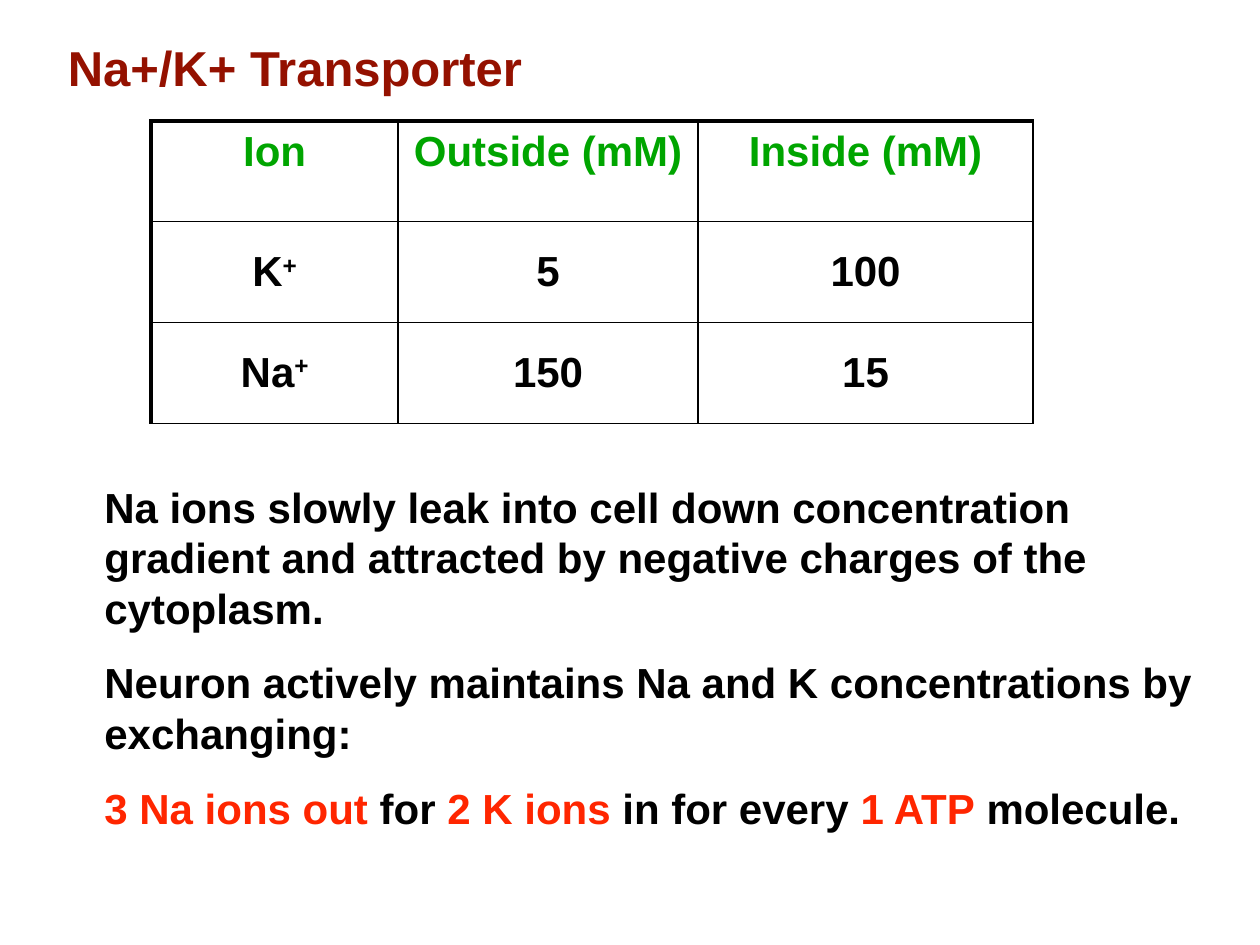
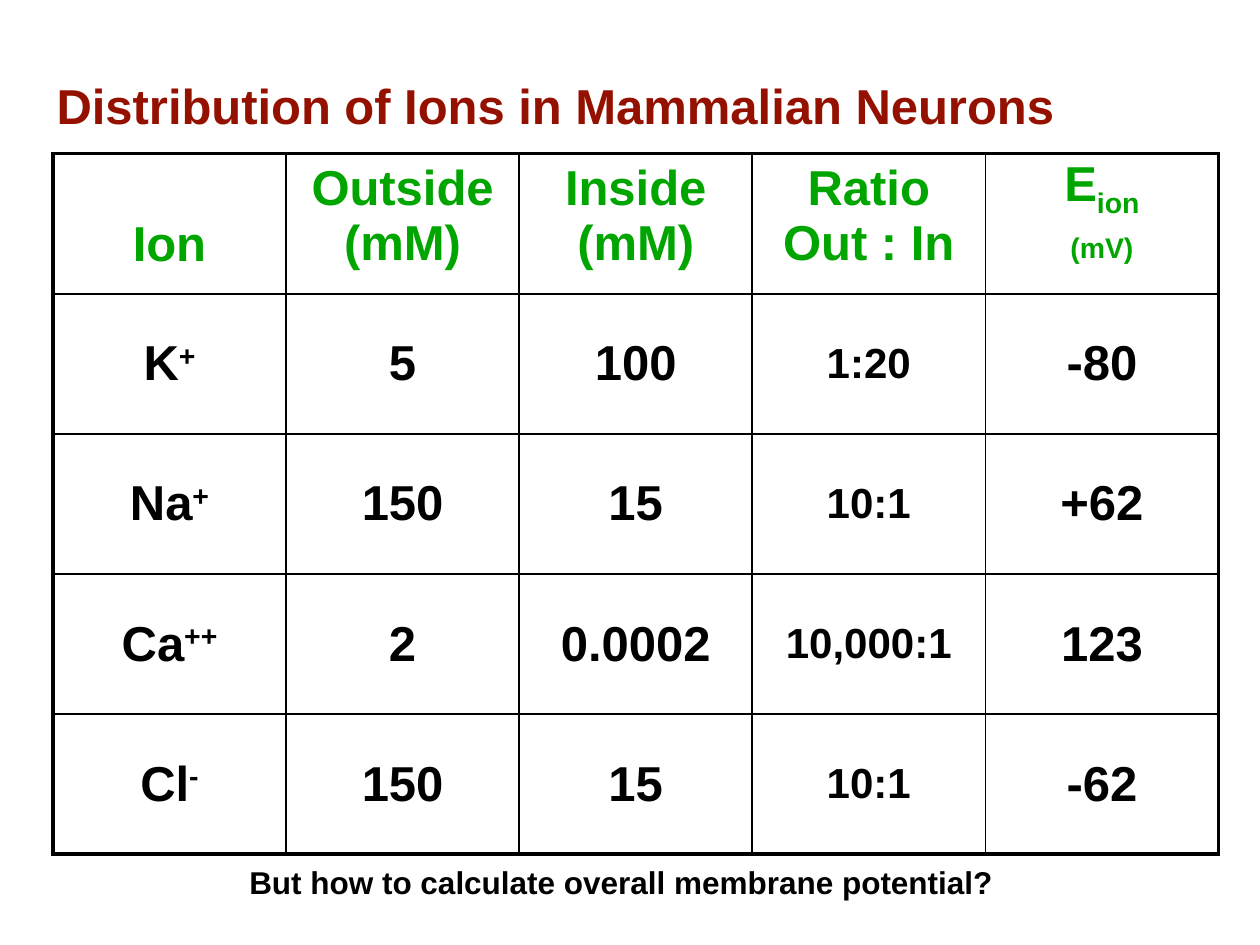
"""Build two slides on ion concentrations in neurons."""
from dataclasses import dataclass
from typing import NamedTuple

from lxml import etree
from pptx import Presentation
from pptx import util as u
from pptx.dml import color
from pptx.enum import text
from pptx.oxml import ns

COLORS = {"title": "941100", "header": "00A500", "body": "000000",
          "accent": "FF2600", "border": "000000"}
FONT = "Arial"
PADDING = u.Inches(0.06)
SIDE_PADDING = u.Inches(0.1)
THIN, THICK = u.Pt(1), u.Pt(2.25)
CENTER = text.PP_ALIGN.CENTER
TOP, MIDDLE = text.MSO_ANCHOR.TOP, text.MSO_ANCHOR.MIDDLE


class Span(NamedTuple):
    text: str
    color: str | None = None
    baseline: int = 0


Line = list[Span]


class Area(NamedTuple):
    left: float
    top: float
    width: float
    height: float


@dataclass
class Style:
    size: float
    color: str = "body"
    align: text.PP_ALIGN = text.PP_ALIGN.LEFT
    space_before: float = 0
    line_spacing: float = 1


@dataclass
class TextBlock:
    area: Area
    lines: list[Line]
    style: Style
    anchor: text.MSO_ANCHOR = TOP


@dataclass
class IonTable:
    area: Area
    columns: list[float]
    rows: list[list[list[Line]]]
    size: float
    thick_edges: str
    ratio_column: int | None = None


def plain(*lines: str) -> list[Line]:
    """Return one unmarked span per line."""
    return [[Span(line)] for line in lines]


def ion(symbol: str, charge: str) -> list[Line]:
    """Return an ion symbol with its raised charge."""
    return [[Span(symbol), Span(charge, baseline=30)]]


def write_lines(frame, lines: list[Line], style: Style) -> None:
    """Fill a text frame with formatted lines."""
    frame.word_wrap = True
    for index, line in enumerate(lines):
        para = frame.add_paragraph() if index else frame.paragraphs[0]
        para.alignment = style.align
        para.line_spacing = style.line_spacing
        para.space_before = u.Pt(style.space_before if index else 0)
        for part in line:
            span = para.add_run()
            span.text = part.text
            span.font.name = FONT
            span.font.size = u.Pt(style.size)
            span.font.bold = True
            span.font.color.rgb = color.RGBColor.from_string(
                COLORS[part.color or style.color])
            if part.baseline:
                span.font._element.set("baseline", str(part.baseline * 1000))


def pad(holder) -> None:
    """Give a cell or text frame the shared margins."""
    holder.margin_left = holder.margin_right = SIDE_PADDING
    holder.margin_top = holder.margin_bottom = PADDING


def draw_text(page, block: TextBlock) -> None:
    """Draw a text block."""
    box = page.shapes.add_textbox(*map(u.Inches, block.area))
    frame = box.text_frame
    pad(frame)
    frame.vertical_anchor = block.anchor
    write_lines(frame, block.lines, block.style)


def draw_title(page, title: str, area: Area) -> None:
    """Draw a slide title."""
    draw_text(page, TextBlock(area, plain(title), Style(28, "title"), MIDDLE))


def set_borders(cell, thick_edges: str) -> None:
    """Draw the four borders of a cell."""
    properties = cell._tc.get_or_add_tcPr()
    for index, edge in enumerate("LRTB"):
        width = THICK if edge in thick_edges else THIN
        line = etree.Element(ns.qn(f"a:ln{edge}"), w=str(int(width)))
        fill = etree.SubElement(line, ns.qn("a:solidFill"))
        etree.SubElement(fill, ns.qn("a:srgbClr"), val=COLORS["border"])
        properties.insert(index, line)


def draw_table(page, data: IonTable) -> None:
    """Draw an ion table with a coloured header row."""
    row_count, column_count = len(data.rows), len(data.columns)
    table = page.shapes.add_table(
        row_count, column_count, *map(u.Inches, data.area)).table
    table.first_row = table.horz_banding = False
    for column, width in zip(table.columns, data.columns):
        column.width = u.Inches(width)
    header_depth = max(len(lines) for lines in data.rows[0])
    for r, row in enumerate(data.rows):
        for c, lines in enumerate(row):
            cell = table.cell(r, c)
            pad(cell)
            cell.fill.background()
            cell.vertical_anchor = MIDDLE if r else TOP
            style = Style(data.size, "body" if r else "header", CENTER)
            if r and c == data.ratio_column:
                style.size = 24
            if not r:
                missing = header_depth - len(lines)
                cell.margin_top += u.Pt(missing * data.size * 1.15)
                if any(span.baseline for line in lines for span in line):
                    style.line_spacing = 0.8
            write_lines(cell.text_frame, lines, style)
            outer = {"L": c == 0, "R": c == column_count - 1,
                     "T": r == 0, "B": r == row_count - 1}
            set_borders(cell, "".join(
                edge for edge in data.thick_edges if outer[edge]))


def draw_transporter(page) -> None:
    """Draw the transporter slide."""
    draw_title(page, "Na+/K+ Transporter", Area(0.44, 0.12, 7.97, 0.82))
    exchange = [Span("3 Na ions out", "accent"), Span(" for "),
                Span("2 K ions", "accent"), Span(" in for every "),
                Span("1 ATP", "accent"), Span(" molecule.")]
    facts = plain(
        "Na ions slowly leak into cell down concentration gradient and "
        "attracted by negative charges of the cytoplasm.",
        "Neuron actively maintains Na and K concentrations by exchanging:")
    draw_text(page, TextBlock(Area(0.73, 3.76, 8.92, 2.93),
                              facts + [exchange], Style(24, space_before=14)))
    rows = [
        [plain("Ion"), plain("Outside (mM)"), plain("Inside (mM)")],
        [ion("K", "+"), plain("5"), plain("100")],
        [ion("Na", "+"), plain("150"), plain("15")],
    ]
    draw_table(page, IonTable(Area(1.2, 0.96, 7, 2.4), [1.96, 2.38, 2.66],
                              rows, 24, "LT"))


def draw_distribution(page) -> None:
    """Draw the ion distribution slide."""
    draw_title(page, "Distribution of Ions in Mammalian Neurons",
               Area(0.35, -0.17, 8.95, 2.01))
    potential = [[Span("E"), Span("ion", baseline=-25)],
                 [Span("(mV)", baseline=-19)]]
    ions = [("K", "+", "5", "100", "1:20", "-80"),
            ("Na", "+", "150", "15", "10:1", "+62"),
            ("Ca", "++", "2", "0.0002", "10,000:1", "123"),
            ("Cl", "-", "150", "15", "10:1", "-62")]
    rows = [[plain("Ion"), plain("Outside", "(mM)"), plain("Inside", "(mM)"),
             plain("Ratio", "Out : In"), potential]]
    rows += [[ion(symbol, charge), *map(plain, values)]
             for symbol, charge, *values in ions]
    draw_table(page, IonTable(Area(0.42, 1.22, 9.24, 5.56), [1.85] * 5,
                              rows, 28, "LRTB", ratio_column=3))
    draw_text(page, TextBlock(
        Area(1.88, 6.79, 6.25, 0.42),
        plain("But how to calculate overall membrane potential?"), Style(18)))


def main() -> None:
    """Build and save the deck."""
    deck = Presentation()
    deck.slide_width, deck.slide_height = u.Inches(10), u.Inches(7.5)
    for draw in (draw_transporter, draw_distribution):
        draw(deck.slides.add_slide(deck.slide_layouts[6]))
    deck.save("out.pptx")


if __name__ == "__main__":
    main()
